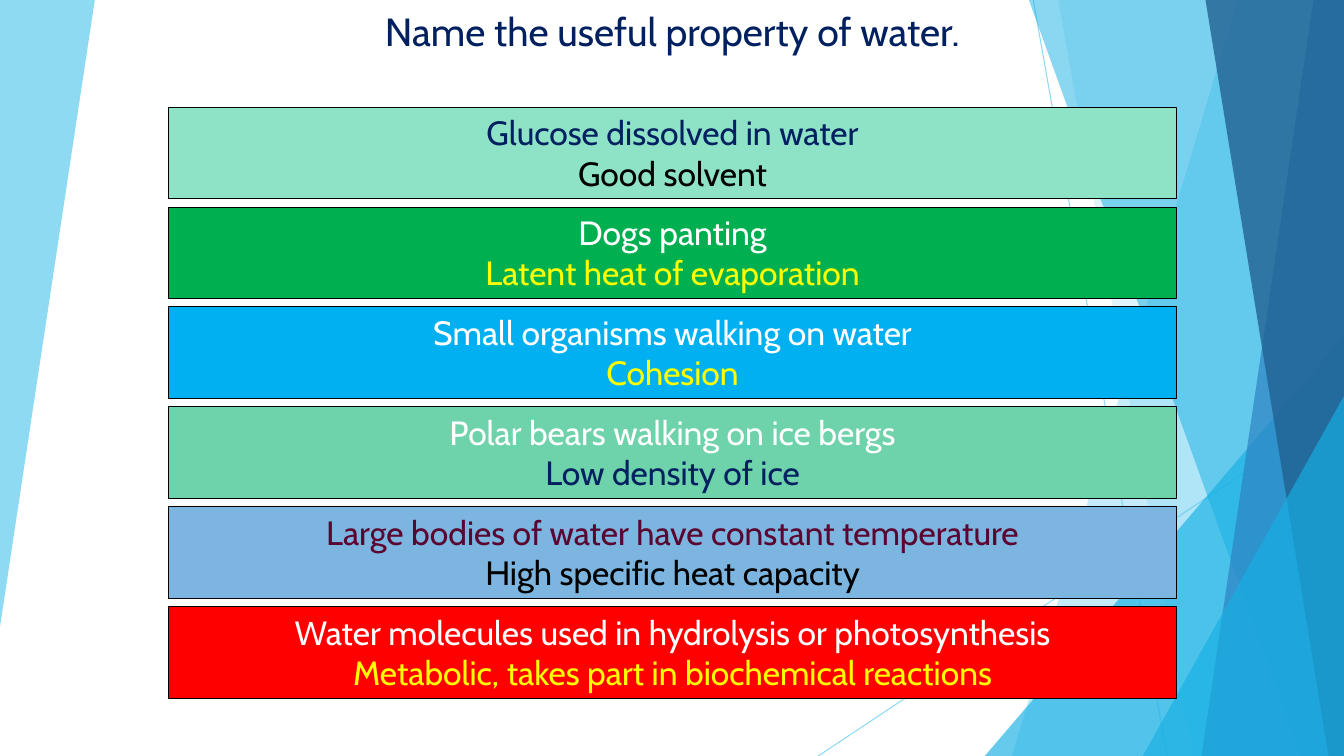
from dataclasses import dataclass

from lxml.etree import SubElement
from pptx import Presentation
from pptx.dml.color import RGBColor
from pptx.enum.shapes import MSO_CONNECTOR as Connector, MSO_SHAPE as Shape
from pptx.enum.text import MSO_ANCHOR as Anchor, MSO_AUTO_SIZE as AutoSize, PP_ALIGN as Align
from pptx.oxml.ns import qn
from pptx.util import Cm, Pt


@dataclass(frozen=True)
class Theme:
    font: str = "Cabin"
    title_size: int = 28
    band_size: int = 24
    line_width: float = 0.75
    white: str = "FFFFFF"
    black: str = "000000"
    navy: str = "002060"
    yellow: str = "FFFF00"
    plum: str = "5A0630"
    green: str = "00B050"
    blue: str = "00B0F0"
    mint: str = "8EE3C7"
    sea_green: str = "6ED2AA"
    pale_blue: str = "7CB5E0"
    red: str = "FF0000"
    sky: str = "5FCBEF"
    cyan: str = "17B0E4"
    steel: str = "2E83C3"
    deep: str = "226292"


THEME = Theme()
WIDTH, HEIGHT = 33.87, 19.05

# Example, property, fill, example colour, property colour
BANDS = [
    ("Glucose dissolved in water", "Good solvent",
     THEME.mint, THEME.navy, THEME.black),
    ("Dogs panting", "Latent heat of evaporation",
     THEME.green, THEME.white, THEME.yellow),
    ("Small organisms walking on water", "Cohesion",
     THEME.blue, THEME.white, THEME.yellow),
    ("Polar bears walking on ice bergs", "Low density of ice",
     THEME.sea_green, THEME.white, THEME.navy),
    ("Large bodies of water have constant temperature", "High specific heat capacity",
     THEME.pale_blue, THEME.plum, THEME.black),
    ("Water molecules used in hydrolysis or photosynthesis",
     "Metabolic, takes part in biochemical reactions",
     THEME.red, THEME.white, THEME.yellow),
]


def paint(fill, colour, opacity=100):
    fill.solid()
    fill.fore_color.rgb = RGBColor.from_string(colour)
    if opacity < 100:
        tint = fill._xPr.find(f".//{qn('a:srgbClr')}")
        SubElement(tint, qn("a:alpha"), val=str(opacity * 1000))


def finish_facet(facet, colour, opacity):
    paint(facet.fill, colour, opacity)
    facet.line.fill.background()
    facet.shadow.inherit = False


def add_facet(slide, corners, colour, opacity):
    start, *others = [(Cm(x), Cm(y)) for x, y in corners]
    outline = slide.shapes.build_freeform(*start, scale=1.0)
    outline.add_line_segments(others, close=True)
    finish_facet(outline.convert_to_shape(), colour, opacity)


def add_corner_triangle(slide, left, top, right, bottom, colour, opacity):
    triangle = slide.shapes.add_shape(
        Shape.ISOSCELES_TRIANGLE, Cm(left), Cm(top), Cm(right - left), Cm(bottom - top))
    triangle.adjustments[0] = 1
    finish_facet(triangle, colour, opacity)


def add_hairline(slide, x1, y1, x2, y2):
    hairline = slide.shapes.add_connector(
        Connector.STRAIGHT, Cm(x1), Cm(y1), Cm(x2), Cm(y2))
    hairline.line.width = Pt(THEME.line_width)
    paint(hairline.line.fill, THEME.sky, 70)
    SubElement(hairline._element.spPr, qn("a:effectLst"))


def add_backdrop(slide, left, top, right, bottom):
    def add_side_facet(upper, lower, colour, opacity):
        """Facet between a slanted edge and the right side of the box."""
        corners = [(left + upper, top), (right, top), (right, bottom), (left + lower, bottom)]
        add_facet(slide, corners, colour, opacity)

    # Left wedge and crossing hairlines
    add_facet(slide, [(left, top), (left + 2.39, top), (left, top + 15.8)], THEME.sky, 70)
    add_hairline(slide, left + 26.04, top, left + 29.41, bottom)
    add_hairline(slide, right, top + 10.24, left + 20.62, bottom)

    # Overlapping facets on the right, from back to front
    add_side_facet(31.19, 25.5, THEME.sky, 36)
    add_side_facet(26.67, 30.05, THEME.sky, 20)
    add_corner_triangle(slide, left + 24.82, top + 8.46, right, bottom, THEME.cyan, 66)
    add_side_facet(25.93, 32.79, THEME.cyan, 50)
    add_side_facet(33.1, 30.28, THEME.steel, 70)
    add_side_facet(30.38, 33.48, THEME.deep, 80)
    add_corner_triangle(slide, left + 28.8, top + 9.98, right, bottom, THEME.cyan, 66)


def write_lines(frame, lines, size):
    frame.word_wrap = True
    frame.auto_size = AutoSize.SHAPE_TO_FIT_TEXT
    frame.vertical_anchor = Anchor.TOP
    for index, (words, colour) in enumerate(lines):
        line = frame.add_paragraph() if index else frame.paragraphs[0]
        line.alignment = Align.CENTER
        run = line.add_run()
        run.text = words
        run.font.name = THEME.font
        run.font.size = Pt(size)
        run.font.color.rgb = RGBColor.from_string(colour)


def add_title(slide, left, top, width, height):
    title = slide.shapes.add_textbox(Cm(left), Cm(top), Cm(width), Cm(height))
    write_lines(title.text_frame, [("Name the useful property of water.", THEME.navy)],
                THEME.title_size)


def add_bands(slide, left, top, width, height):
    band_height = 2.31
    pitch = (height - band_height) / (len(BANDS) - 1)
    for row, (example, answer, fill, example_colour, answer_colour) in enumerate(BANDS):
        band = slide.shapes.add_shape(
            Shape.RECTANGLE, Cm(left), Cm(top + row * pitch), Cm(width), Cm(band_height))
        paint(band.fill, fill)
        paint(band.line.fill, THEME.black)
        band.line.width = Pt(THEME.line_width)
        band.shadow.inherit = False
        write_lines(band.text_frame, [(example, example_colour), (answer, answer_colour)],
                    THEME.band_size)


def main():
    deck = Presentation()
    deck.slide_width, deck.slide_height = Cm(WIDTH), Cm(HEIGHT)
    slide = deck.slides.add_slide(deck.slide_layouts[6])
    paint(slide.background.fill, THEME.white)
    add_backdrop(slide, 0, 0, WIDTH, HEIGHT)
    add_title(slide, 4.24, 0.05, 25.4, 1.45)
    add_bands(slide, 4.25, 2.7, 25.4, 14.9)
    deck.save("out.pptx")


if __name__ == "__main__":
    main()
